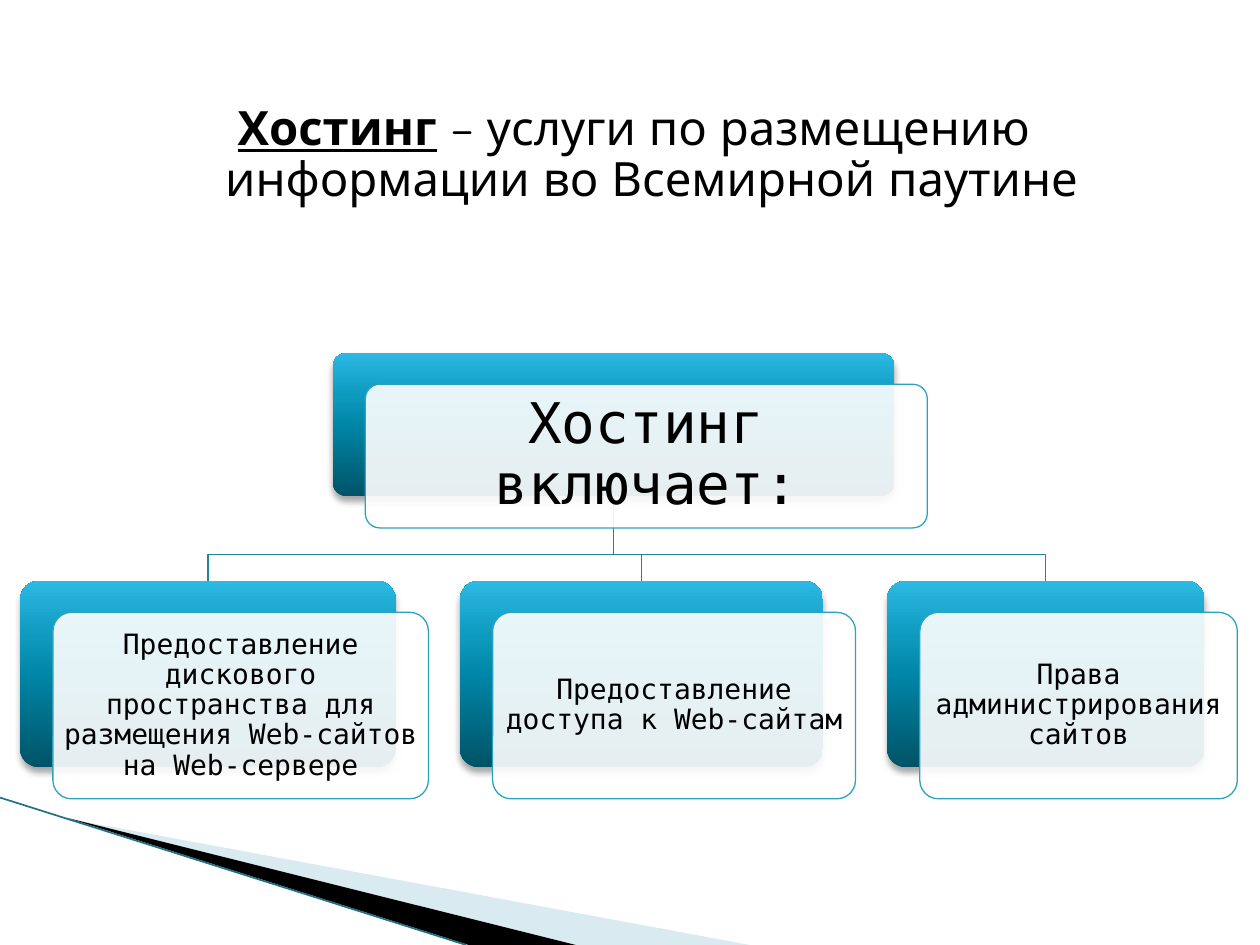
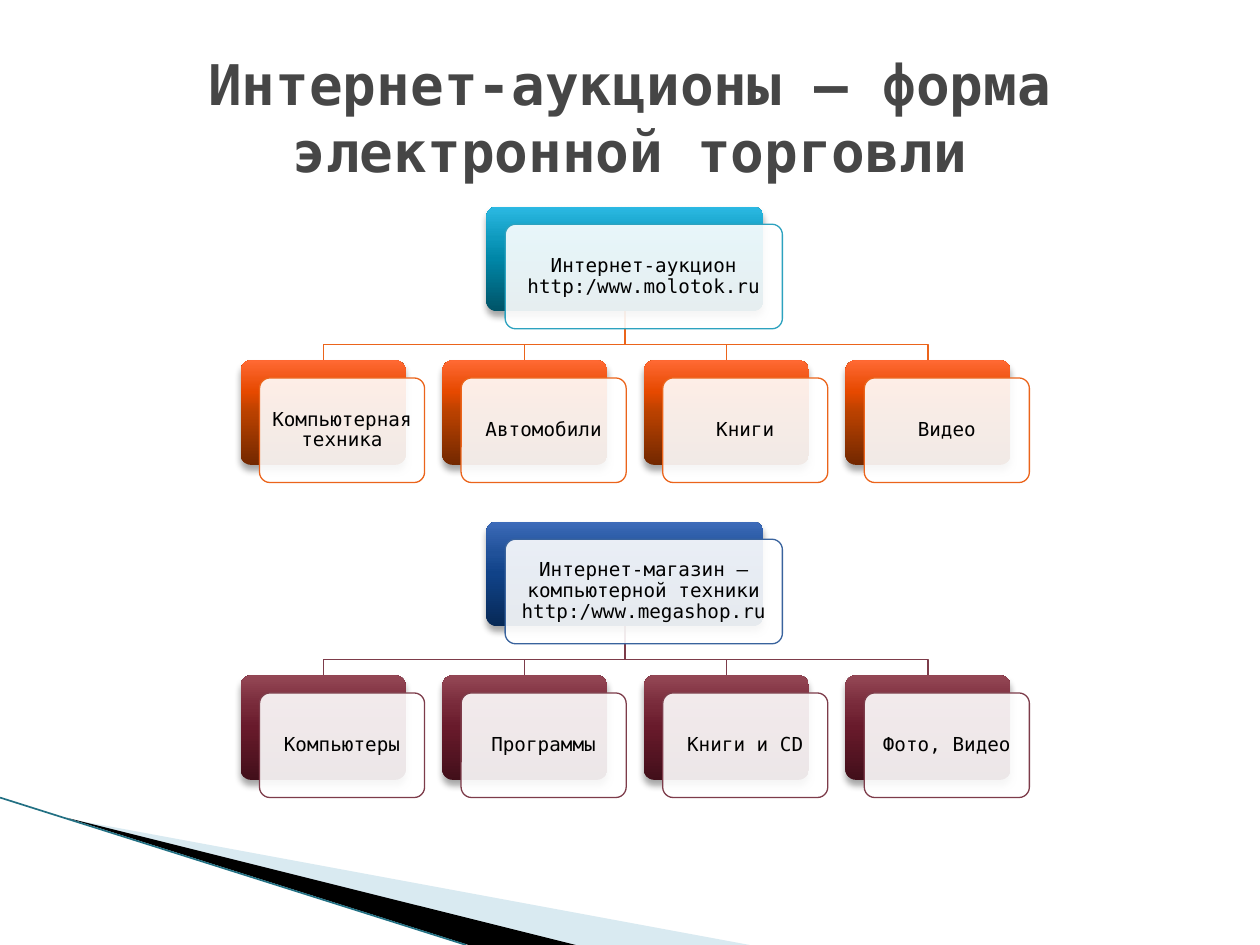
"""Build two slides about hosting and internet auctions with hierarchy diagrams."""
from dataclasses import dataclass

from pptx import Presentation
from pptx.dml.color import RGBColor
from pptx.enum.shapes import MSO_CONNECTOR, MSO_SHAPE
from pptx.enum.text import MSO_ANCHOR, MSO_AUTO_SIZE, PP_ALIGN
from pptx.oxml import parse_xml
from pptx.oxml.ns import nsdecls, qn
from pptx.util import Inches, Pt

MONO = "DejaVu Sans Mono"
BODY = "Quicksand"
BLACK = "000000"
WHITE = "FFFFFF"
TITLE_COLOR = "464646"
PALE_BLUE = "A0CBDC"
BAND_LINE = "227083"
TEAL_LINK = "248299"
GRADIENT_POSITIONS = (0, 50, 70, 100)


@dataclass
class Palette:
    """Outline colour and gradient, from bottom to top, of a card."""
    outline: str
    gradient: tuple


TEAL = Palette("2DA2BF", ("005367", "0086A7", "0E9ABE", "2CB9E3"))
ORANGE = Palette("EB641B", ("732800", "B94100", "E64900", "FF6933"))
BLUE = Palette("39639D", ("072956", "104288", "205199", "3D6BB9"))
WINE = Palette("7D3C4A", ("420F1A", "681A2B", "772939", "944755"))


@dataclass
class Card:
    """Text, place, size and look of one card, in inches and points."""
    text: str
    left: float
    top: float
    width: float
    height: float
    size: int
    palette: Palette

    @property
    def center(self):
        """Return the horizontal middle of the card."""
        return self.left + self.width / 2


def color(value):
    """Turn a hex string into a colour."""
    return RGBColor.from_string(value)


def set_alpha(shape, percent):
    """Make the solid fill of a shape partly transparent."""
    solid = shape.element.spPr.find(qn("a:solidFill")).find(qn("a:srgbClr"))
    solid.append(parse_xml(f'<a:alpha {nsdecls("a")} val="{percent * 1000}"/>'))


def add_run(paragraph, text, size, font, shade, bold=False, underline=False):
    """Add one formatted run to a paragraph."""
    run = paragraph.add_run()
    run.text = text
    run.font.size = Pt(size)
    run.font.name = font
    run.font.color.rgb = color(shade)
    run.font.bold = bold
    run.font.underline = underline


def place(shape, left, top, width, height):
    """Move and size a shape."""
    shape.left, shape.top = Inches(left), Inches(top)
    shape.width, shape.height = Inches(width), Inches(height)


def add_outline(shapes, points, closed):
    """Add a freeform through the given points."""
    corners = [(Inches(x), Inches(y)) for x, y in points]
    builder = shapes.build_freeform(*corners[0])
    builder.add_line_segments(corners[1:], close=closed)
    shape = builder.convert_to_shape()
    shape.shadow.inherit = False
    return shape


def add_wedge(shapes, points, shade):
    """Add a filled wedge without outline."""
    wedge = add_outline(shapes, points, True)
    wedge.fill.solid()
    wedge.fill.fore_color.rgb = color(shade)
    wedge.line.fill.background()
    return wedge


def add_corner_band(slide):
    """Draw the corner band and move it to the slide master."""
    pale = add_wedge(slide.shapes, [(0.55, 6.5), (5.95, 7.5), (4.56, 7.5)], PALE_BLUE)
    set_alpha(pale, 40)
    dark = add_wedge(slide.shapes, [(0.53, 6.49), (4.57, 7.5), (3.72, 7.5)], BLACK)
    edge = slide.shapes.add_connector(
        MSO_CONNECTOR.STRAIGHT, Inches(0), Inches(6.33), Inches(3.7), Inches(7.5))
    edge.line.color.rgb = color(BAND_LINE)
    edge.line.width = Pt(0.95)
    edge.element.spPr.append(parse_xml(f'<a:effectLst {nsdecls("a")}/>'))
    master_tree = slide.slide_layout.slide_master.shapes.element
    for part in (pale, dark, edge):
        master_tree.append(part.element)


def add_rounded(shapes, left, top, width, height):
    """Add a rounded rectangle with small corners."""
    shape = shapes.add_shape(
        MSO_SHAPE.ROUNDED_RECTANGLE, Inches(left), Inches(top), Inches(width), Inches(height))
    shape.adjustments[0] = 0.1
    return shape


def add_backing(shapes, card):
    """Add the gradient plate with a soft shadow behind a card."""
    backing = add_rounded(shapes, card.left, card.top, card.width, card.height)
    backing.line.fill.background()
    stops = "".join(
        f'<a:gs pos="{position * 1000}"><a:srgbClr val="{shade}"/></a:gs>'
        for position, shade in zip(GRADIENT_POSITIONS, card.palette.gradient))
    outline = backing.element.spPr.find(qn("a:ln"))
    outline.addprevious(parse_xml(
        f'<a:gradFill {nsdecls("a")} rotWithShape="1"><a:gsLst>{stops}</a:gsLst>'
        '<a:lin ang="16200000" scaled="0"/></a:gradFill>'))
    outline.addnext(parse_xml(
        f'<a:effectLst {nsdecls("a")}><a:outerShdw blurRad="{Pt(4)}" dist="{Pt(3)}" '
        f'dir="5400000" rotWithShape="0"><a:srgbClr val="{BLACK}"><a:alpha val="35000"/>'
        '</a:srgbClr></a:outerShdw></a:effectLst>'))


def add_card(shapes, card, offset):
    """Add a plate and the translucent text frame shifted from it."""
    add_backing(shapes, card)
    shift_x, shift_y = offset
    frame = add_rounded(
        shapes, card.left + shift_x, card.top + shift_y, card.width, card.height)
    frame.shadow.inherit = False
    frame.fill.solid()
    frame.fill.fore_color.rgb = color(WHITE)
    set_alpha(frame, 90)
    frame.line.color.rgb = color(card.palette.outline)
    frame.line.width = Pt(0.75)
    text_frame = frame.text_frame
    text_frame.word_wrap = True
    text_frame.vertical_anchor = MSO_ANCHOR.MIDDLE
    text_frame.margin_left = text_frame.margin_right = Inches(0.03)
    text_frame.margin_top = text_frame.margin_bottom = Inches(0.03)
    paragraph = text_frame.paragraphs[0]
    paragraph.alignment = PP_ALIGN.CENTER
    paragraph.line_spacing = 0.9
    add_run(paragraph, card.text, card.size, MONO, BLACK)


def add_link(shapes, parent, child, shift_y, shade):
    """Join a parent card to a child card with a stepped line."""
    bottom = parent.top + parent.height
    bend = (bottom + shift_y + child.top) / 2
    points = [(parent.center, bottom), (parent.center, bend),
              (child.center, bend), (child.center, child.top)]
    link = add_outline(shapes, points, False)
    link.fill.background()
    link.line.color.rgb = color(shade)
    link.line.width = Pt(0.75)


def add_hierarchy(slide, parent, children, offset, link_color):
    """Add a grouped diagram of one parent card and its children."""
    shapes = slide.shapes.add_group_shape().shapes
    for child in reversed(children):
        add_link(shapes, parent, child, offset[1], link_color)
    for card in (parent, *children):
        add_card(shapes, card, offset)


def row_of_cards(texts, widths, left, top, height, gap, size, palette):
    """Lay out cards from left to right with equal gaps."""
    cards = []
    for text, width in zip(texts, widths):
        cards.append(Card(text, left, top, width, height, size, palette))
        left += width + gap
    return cards


def fill_definition(slide):
    """Write the definition of hosting in the body placeholder."""
    title, body = slide.placeholders
    title.element.getparent().remove(title.element)
    place(body, 0.47, 0.78, 9, 1.33)
    body.text_frame.auto_size = MSO_AUTO_SIZE.NONE
    paragraph = body.text_frame.paragraphs[0]
    properties = paragraph._p.get_or_add_pPr()
    properties.set("marL", str(Inches(0.4)))
    properties.set("indent", str(Inches(-0.28)))
    properties.append(parse_xml(f'<a:buNone {nsdecls("a")}/>'))
    paragraph.alignment = PP_ALIGN.CENTER
    paragraph.space_before = Pt(0)
    paragraph.line_spacing = 0.9
    add_run(paragraph, "Хостинг", 27, BODY, BLACK, bold=True, underline=True)
    add_run(paragraph, " ", 27, BODY, BLACK, bold=True)
    add_run(paragraph, "– услуги по размещению информации во Всемирной паутине",
            27, BODY, BLACK)


def fill_title(slide, text):
    """Write and format the slide title."""
    title = slide.shapes.title
    place(title, 0.5, 0.3, 9, 1.25)
    title.text_frame.auto_size = MSO_AUTO_SIZE.NONE
    title.text_frame.vertical_anchor = MSO_ANCHOR.MIDDLE
    paragraph = title.text_frame.paragraphs[0]
    paragraph.alignment = PP_ALIGN.CENTER
    add_run(paragraph, text, 32, MONO, TITLE_COLOR, bold=True)


def build_hosting(slide):
    """Fill the slide on hosting."""
    fill_definition(slide)
    parent = Card("Хостинг включает:", 2.64, 2.8, 4.46, 1.14, 32, TEAL)
    services = row_of_cards(
        ["Предоставление дискового пространства для размещения Web-сайтов на Web-сервере",
         "Предоставление доступа к Web-сайтам",
         "Права администрирования сайтов"],
        [2.98, 2.88, 2.52], 0.16, 4.61, 1.48, 0.51, 16, TEAL)
    add_hierarchy(slide, parent, services, (0.26, 0.25), TEAL_LINK)


def build_auctions(slide):
    """Fill the slide on internet auctions."""
    fill_title(slide, "Интернет-аукционы – форма электронной торговли")
    sites = [
        ("Интернет-аукцион http:/www.molotok.ru", TEAL, ORANGE,
         ["Компьютерная техника", "Автомобили", "Книги", "Видео"]),
        ("Интернет-магазин – компьютерной техники http:/www.megashop.ru", BLUE, WINE,
         ["Компьютеры", "Программы", "Книги и CD", "Фото, Видео"]),
    ]
    for index, (site, site_palette, goods_palette, goods) in enumerate(sites):
        top = 1.64 + 2.5 * index
        parent = Card(site, 3.86, top, 2.2, 0.83, 11, site_palette)
        children = row_of_cards(
            goods, [1.31] * len(goods), 1.91, top + 1.22, 0.83, 0.29, 11, goods_palette)
        add_hierarchy(slide, parent, children, (0.15, 0.14), goods_palette.outline)


def main():
    """Build and save the presentation."""
    presentation = Presentation()
    presentation.slide_width, presentation.slide_height = Inches(10), Inches(7.5)
    layouts = presentation.slide_layouts
    hosting = presentation.slides.add_slide(layouts.get_by_name("Title and Content"))
    add_corner_band(hosting)
    build_hosting(hosting)
    build_auctions(presentation.slides.add_slide(layouts.get_by_name("Title Only")))
    presentation.save("out.pptx")


if __name__ == "__main__":
    main()
